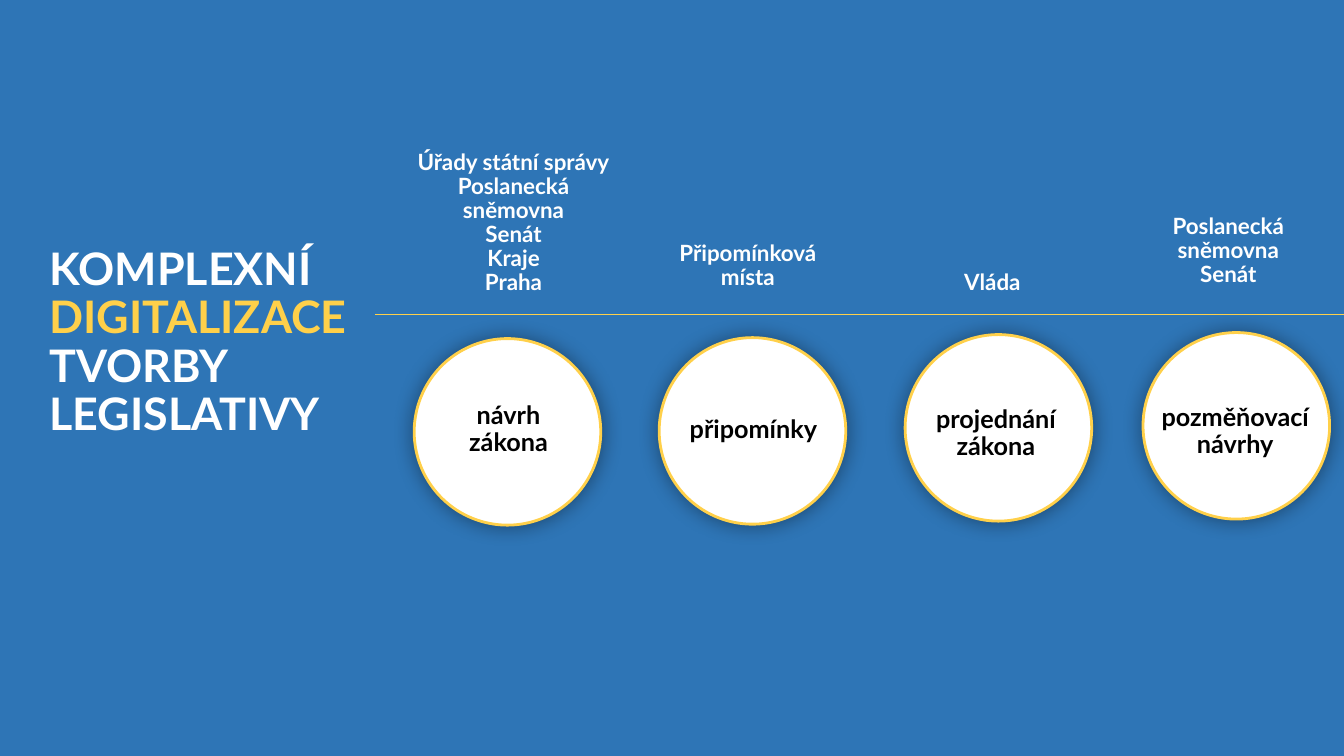
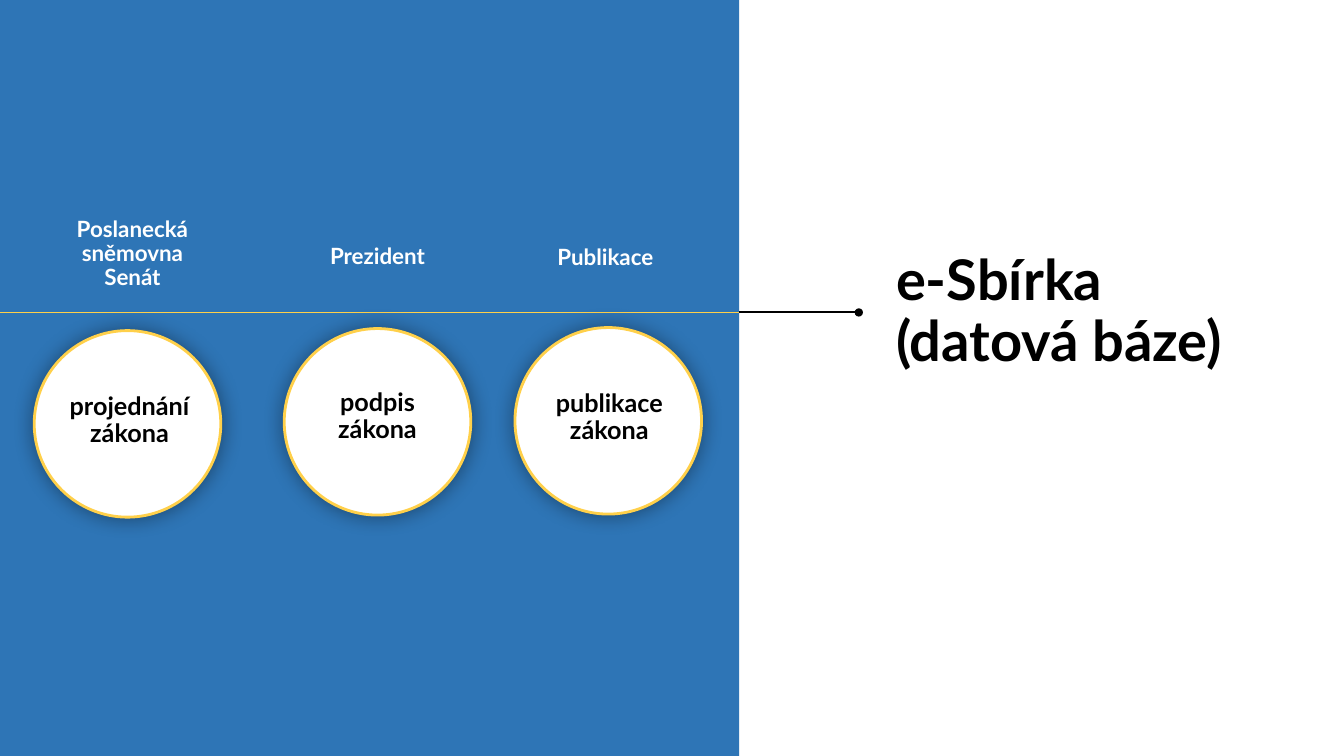
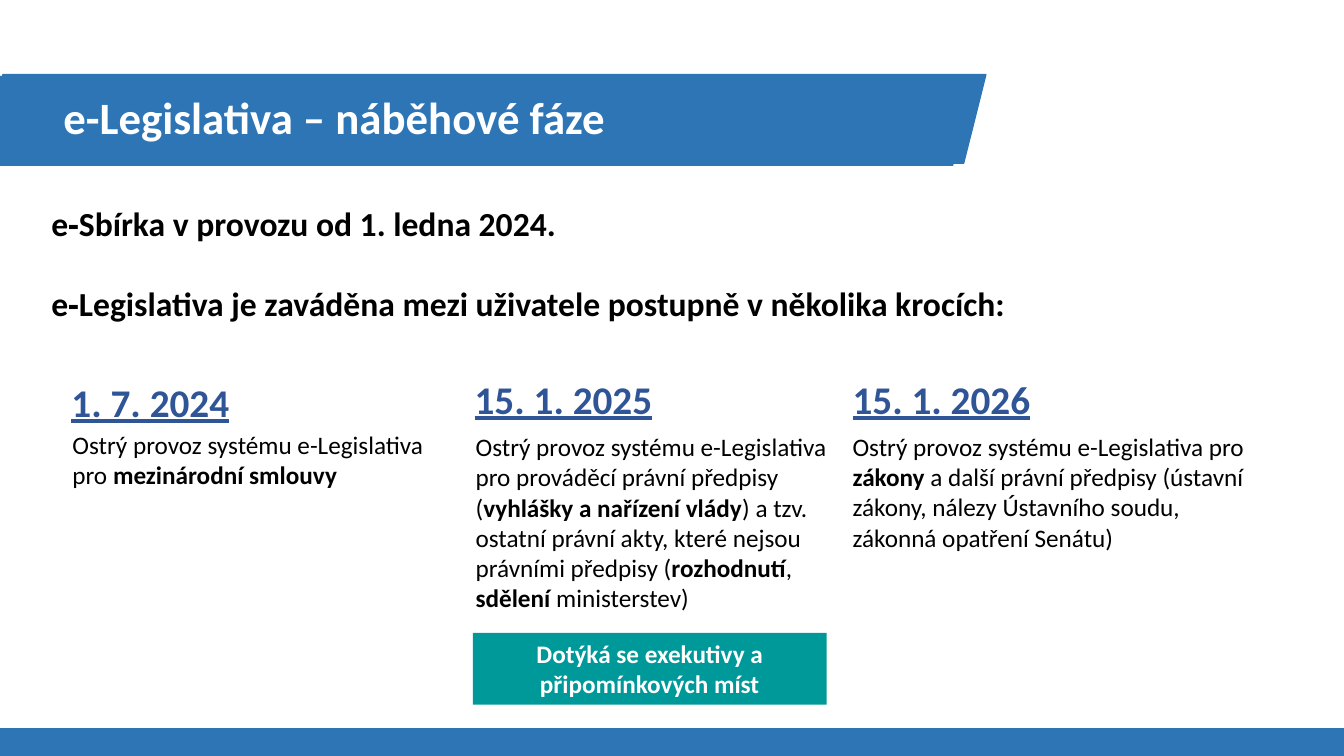
from lxml.etree import SubElement
from pptx import Presentation
from pptx.dml.color import RGBColor
from pptx.enum.shapes import MSO_CONNECTOR, MSO_SHAPE
from pptx.enum.text import MSO_ANCHOR, PP_ALIGN
from pptx.oxml.ns import qn
from pptx.util import Inches, Pt

COLORS = {
    "blue": "2E75B6",
    "yellow": "FFD04A",
    "white": "FFFFFF",
    "black": "000000",
    "date": "2F5597",
    "teal": "009999",
}


class Deck:
    """Holds the style and the current slide; lengths are percent of the slide."""

    display_font = "Lato"
    body_font = "Calibri"
    circle_size = (13.88, 24.67)
    label_height = 20.4

    def __init__(self):
        self.presentation = Presentation()
        self.presentation.slide_width = Inches(13.33)
        self.presentation.slide_height = Inches(7.5)
        self.slide = None

    def color(self, name):
        return RGBColor.from_string(COLORS[name])

    def across(self, share):
        return round(self.presentation.slide_width * share / 100)

    def down(self, share):
        return round(self.presentation.slide_height * share / 100)

    def place(self, box):
        left, top, width, height = box
        return self.across(left), self.down(top), self.across(width), self.down(height)

    def new_slide(self, background):
        self.slide = self.presentation.slides.add_slide(self.presentation.slide_layouts[6])
        fill = self.slide.background.fill
        fill.solid()
        fill.fore_color.rgb = self.color(background)

    def shape(self, kind, box, fill, line=None, line_width=1):
        shape = self.slide.shapes.add_shape(kind, *self.place(box))
        shape.shadow.inherit = False
        shape.fill.solid()
        shape.fill.fore_color.rgb = self.color(fill)
        if line:
            shape.line.color.rgb = self.color(line)
            shape.line.width = Pt(line_width)
        else:
            shape.line.fill.background()
        return shape

    def line(self, start, end, level, color, width=1, tail=None):
        connector = self.slide.shapes.add_connector(
            MSO_CONNECTOR.STRAIGHT,
            self.across(start), self.down(level), self.across(end), self.down(level))
        connector.line.color.rgb = self.color(color)
        connector.line.width = Pt(width)
        properties = connector._element.spPr
        if tail:
            SubElement(properties.find(qn("a:ln")), qn("a:tailEnd"), type=tail)
        SubElement(properties, qn("a:effectLst"))

    def set_text(self, shape, paragraphs, size, color, font, bold=True, underline=None,
                 align=PP_ALIGN.LEFT, anchor=MSO_ANCHOR.TOP, spacing=None, accent=None):
        """Fills a shape; text between ** marks is bold, or takes the accent colour."""
        frame = shape.text_frame
        frame.word_wrap = True
        frame.vertical_anchor = anchor
        for index, text in enumerate(paragraphs):
            paragraph = frame.add_paragraph() if index else frame.paragraphs[0]
            paragraph.alignment = align
            paragraph.line_spacing = spacing
            paragraph.font.size = Pt(size)
            paragraph.font.name = font
            paragraph.font.underline = underline
            pieces = text.split("**")
            if len(pieces) == 1:
                paragraph.text = text
                paragraph.font.bold = bold
                paragraph.font.color.rgb = self.color(color)
                continue
            for order, piece in enumerate(pieces):
                marked = order % 2 == 1
                run = paragraph.add_run()
                run.text = piece
                run.font.bold = bold or marked
                run.font.color.rgb = self.color(accent if marked and accent else color)

    def text(self, box, paragraphs, size, color="black", font=body_font, **style):
        shape = self.slide.shapes.add_textbox(*self.place(box))
        self.set_text(shape, paragraphs, size, color, font, **style)
        return shape

    def title(self, box, text, size, color, accent=None):
        frame = self.text(box, [text], size, color, self.display_font, accent=accent,
                          anchor=MSO_ANCHOR.MIDDLE, spacing=0.9).text_frame
        frame.margin_left = frame.margin_right = Inches(0.13)
        frame.margin_top = frame.margin_bottom = Inches(0.07)

    def centered(self, center, width, height, paragraphs, size, color):
        x, y = center
        self.text((x - width / 2, y - height / 2, width, height), paragraphs, size, color,
                  self.display_font, align=PP_ALIGN.CENTER, anchor=MSO_ANCHOR.MIDDLE,
                  spacing=0.9)

    def circle(self, center):
        width, height = self.circle_size
        box = (center[0] - width / 2, center[1] - height / 2, width, height)
        shape = self.shape(MSO_SHAPE.OVAL, box, "white", "yellow", 2)
        effects = shape._element.spPr.find(qn("a:effectLst"))
        shadow = SubElement(effects, qn("a:outerShdw"), blurRad=str(Pt(15)), dist="0",
                            dir="0", algn="ctr", rotWithShape="0")
        tint = SubElement(shadow, qn("a:srgbClr"), val=COLORS["black"])
        SubElement(tint, qn("a:alpha"), val="40000")

    def step(self, circle, label, caption):
        self.circle(circle)
        center, width, text = label
        self.centered(center, width, self.label_height, [text], 18, "black")
        center, width, height, paragraphs = caption
        self.centered(center, width, height, paragraphs, 16, "white")

    def phase(self, date_box, date, body_box, body):
        self.text(date_box, [date], 28, "date", underline=True)
        self.text(body_box, [body], 18, bold=False)

    def band(self, left, top):
        self.shape(MSO_SHAPE.PARALLELOGRAM, (left, top, 74.78, 11.73), "blue", "blue")


def build_drafting(deck):
    deck.new_slide("blue")
    deck.title((2.7, 22.93, 26.33, 45.07),
               "KOMPLEXNÍ **DIGITALIZACE **TVORBY LEGISLATIVY", 32, "white", "yellow")
    deck.line(27.9, 100, 41.6, "yellow")
    steps = [
        ((37.76, 57.13), ((37.84, 56.87), 10.88, "návrh zákona"),
         ((38.21, 29.53), 22.43, 31.07,
          ["Úřady státní správy", "Poslanecká\vsněmovna\vSenát", "Kraje", "Praha"])),
        ((55.99, 57), ((56.06, 56.87), 15.38, "připomínky"),
         ((55.65, 35.27), 13.2, 20.4, ["Připomínková místa"])),
        ((74.29, 56.6), ((74.1, 57.4), 11.55, "projednání zákona"),
         ((73.84, 37.53), 10.88, 20.4, ["Vláda"])),
        ((91.99, 56.33), ((91.91, 57.13), 14.78, "pozměňovací návrhy"),
         ((91.39, 33.27), 20.18, 20.4, ["Poslanecká\vsněmovna\vSenát"])),
    ]
    for step in steps:
        deck.step(*step)


def build_publishing(deck):
    deck.new_slide("white")
    deck.shape(MSO_SHAPE.RECTANGLE, (0, 0, 55, 100), "blue")
    deck.line(0, 55, 41.33, "yellow")
    deck.line(55, 63.9, 41.33, "black", 1.5, "oval")
    deck.title((65.7, 31.47, 33, 19.87), "e-Sbírka\v(datová báze)", 40, "black")
    steps = [
        ((9.49, 56.07), ((9.64, 55.67), 11.63, "projednání zákona"),
         ((9.86, 33.67), 13.28, 20.4, ["Poslanecká\vsněmovna\vSenát"])),
        ((28.09, 55.8), ((28.09, 55.13), 10.88, "podpis zákona"),
         ((28.09, 34.07), 10.88, 20.4, ["Prezident"])),
        ((45.26, 55.67), ((45.34, 55.27), 10.88, "publikace zákona"),
         ((45.04, 34.2), 10.88, 20.4, ["Publikace"])),
    ]
    for step in steps:
        deck.step(*step)


def build_phases(deck):
    deck.new_slide("white")
    deck.band(-2.25, 10.13)
    deck.band(-1.43, 9.87)
    deck.text((3.98, 12, 63.9, 14.13), ["e-Legislativa – náběhové fáze"], 32, "white",
              spacing=0.9)
    deck.shape(MSO_SHAPE.RECTANGLE, (0, 96.4, 100, 3.6), "blue", "blue")
    statements = [
        (26.13, "e‑Sbírka v provozu od 1. ledna 2024."),
        (36.8, "e‑Legislativa je zaváděna mezi uživatele postupně v několika krocích:"),
    ]
    for top, statement in statements:
        deck.text((3.08, top, 95.18, 6.67), [statement], 24)
    phases = [
        ((4.58, 49.33, 26.33, 7.6), "1. 7. 2024", (4.65, 56.13, 28.05, 17.47),
         "Ostrý provoz systému e-Legislativa pro **mezinárodní smlouvy**"),
        ((34.58, 48.93, 26.33, 7.6), "15. 1. 2025", (34.65, 56.4, 28.05, 25.6),
         "Ostrý provoz systému e-Legislativa pro prováděcí právní předpisy "
         "(**vyhlášky a nařízení vlády**) a tzv. ostatní právní akty, které nejsou "
         "právními předpisy (**rozhodnutí**, **sdělení **ministerstev)"),
        ((62.7, 48.93, 26.33, 7.6), "15. 1. 2026", (62.7, 56.4, 32.18, 17.47),
         "Ostrý provoz systému e-Legislativa pro **zákony** a další právní předpisy "
         "(ústavní zákony, nálezy Ústavního soudu, zákonná opatření Senátu)"),
    ]
    for phase in phases:
        deck.phase(*phase)
    badge = deck.shape(MSO_SHAPE.RECTANGLE, (35.18, 83.73, 26.33, 9.47), "teal")
    deck.set_text(badge, ["Dotýká se exekutivy a připomínkových míst"], 18, "white",
                  deck.body_font, align=PP_ALIGN.CENTER, anchor=MSO_ANCHOR.MIDDLE)


def main():
    deck = Deck()
    build_drafting(deck)
    build_publishing(deck)
    build_phases(deck)
    deck.presentation.save("out.pptx")


if __name__ == "__main__":
    main()
